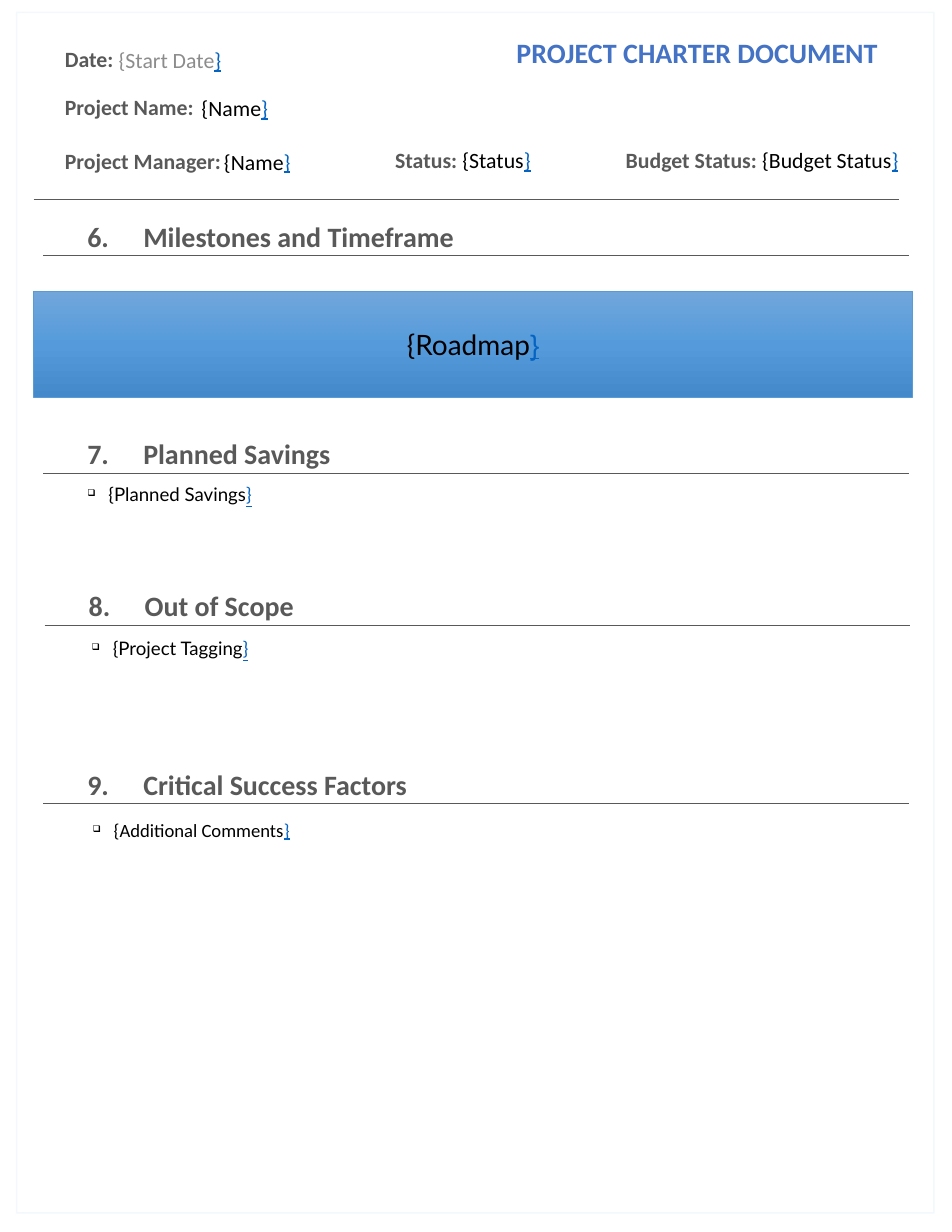
import copy
from dataclasses import dataclass

import lxml.etree
import pptx
import pptx.dml.color
import pptx.enum.shapes
import pptx.enum.text
import pptx.oxml.ns
import pptx.util

Cm = pptx.util.Cm
Pt = pptx.util.Pt
qn = pptx.oxml.ns.qn
Align = pptx.enum.text.PP_ALIGN
Shape = pptx.enum.shapes.MSO_SHAPE


@dataclass(frozen=True)
class Theme:
    label: str = "595959"
    value: str = "000000"
    muted: str = "8C8C8C"
    link: str = "0563C1"
    title: str = "4472C4"
    frame: str = "B5D2EC"
    banner_line: str = "5B9BD5"
    banner: tuple = ("71A6DB", "559BDB", "448ACA")
    heading_size: int = 18
    field_size: int = 14
    bullet_size: int = 12
    font: str = "Calibri"
    accent_font: str = "Lato"
    brace_font: str = "Arial"


theme = Theme()

# Content: lengths in cm, boxes are (left, top, width, height)
title = ("PROJECT CHARTER DOCUMENT", (10.92, 0.69, 9.78, 0.99))
roadmap = ("{Roadmap", (0.76, 6.6, 19.94, 2.41))
frame_box = (0.38, 0.28, 20.8, 27.23)

# Header fields: label, placeholder, box, wraps, value colour
fields = [
    ("Date:", "", (1.22, 0.91, 2.31, 0.86), True, theme.value),
    ("", "{Start Date", (2.44, 0.61, 3.23, 1.5), True, theme.muted),
    ("Project Name:", "", (1.22, 2.01, 4.57, 0.86), True, theme.value),
    ("", "{Name", (4.32, 1.91, 8.31, 1.09), True, theme.value),
    ("Project Manager:", "", (1.22, 3.23, 4.09, 0.86), False, theme.value),
    ("", "{Name", (4.83, 3.1, 8.31, 1.12), True, theme.value),
    ("Status: ", "{Status", (8.71, 3.2, 3.61, 0.86), False, theme.value),
    ("Budget Status: ", "{Budget Status", (13.94, 3.2, 6.76, 0.86), False, theme.value),
]

# Sections: heading, left, top, width, then bullet (text, left, top, font)
sections = [
    ("Milestones and Timeframe", 1.73, 4.85, 10.19, None),
    ("Planned Savings", 1.73, 9.78, 7.37,
     ("{Planned Savings", 1.73, 10.82, theme.accent_font)),
    ("Out of Scope", 1.76, 13.23, 6.5,
     ("{Project Tagging", 1.83, 14.33, theme.accent_font)),
    ("Critical Success Factors", 1.73, 17.28, 9.12,
     ("{Additional Comments", 1.85, 18.44, theme.font)),
]
FIRST_NUMBER = 6
RULE_WIDTH, RULE_OUTDENT, RULE_DROP = 19.63, 0.75, 0.95
BULLET_RIGHT, BULLET_INDENT = 20.6, 0.48

deck = pptx.Presentation()
deck.slide_width, deck.slide_height = Cm(21.59), Cm(27.94)
slide = deck.slides.add_slide(deck.slide_layouts[6])


def rgb(colour):
    return pptx.dml.color.RGBColor.from_string(colour)


def add_run(paragraph, text, size, colour, font=theme.font, bold=False, underline=None):
    run = paragraph.add_run()
    run.text = text
    run.font.size, run.font.name = Pt(size), font
    run.font.bold, run.font.underline = bold, underline
    run.font.color.rgb = rgb(colour)


def add_placeholder(paragraph, text, size, colour=theme.value, font=theme.font,
                    brace_font=None):
    add_run(paragraph, text, size, colour, font)
    add_run(paragraph, "}", size, theme.link, brace_font or font, underline=True)


def add_text(box, wrap=True, middle=False):
    frame = slide.shapes.add_textbox(*map(Cm, box)).text_frame
    frame.word_wrap = wrap
    if middle:
        frame.vertical_anchor = pptx.enum.text.MSO_ANCHOR.MIDDLE
    else:
        frame.auto_size = pptx.enum.text.MSO_AUTO_SIZE.SHAPE_TO_FIT_TEXT
    return frame.paragraphs[0]


def add_rule(left, top):
    rule = slide.shapes.add_connector(
        pptx.enum.shapes.MSO_CONNECTOR.STRAIGHT,
        Cm(left), Cm(top), Cm(left + RULE_WIDTH), Cm(top))
    rule.line.color.rgb, rule.line.width = rgb(theme.label), Pt(0.5)
    lxml.etree.SubElement(rule._element.spPr, qn("a:effectLst"))


def add_bullet(text, left, top, font):
    paragraph = add_text((left, top, BULLET_RIGHT - left, 0.76))
    props = paragraph._p.get_or_add_pPr()
    props.set("marL", str(Cm(BULLET_INDENT)))
    props.set("indent", str(-Cm(BULLET_INDENT)))
    lxml.etree.SubElement(props, qn("a:buSzPct")).set("val", "50000")
    lxml.etree.SubElement(props, qn("a:buChar")).set("char", "❑")
    add_placeholder(paragraph, text, theme.bullet_size, font=font)


def add_box(box, line, width):
    shape = slide.shapes.add_shape(Shape.RECTANGLE, *map(Cm, box))
    shape.shadow.inherit = False
    shape.line.color.rgb, shape.line.width = rgb(line), Pt(width)
    return shape


# Page frame, with a nearly transparent line
page_frame = add_box(frame_box, theme.frame, 1)
page_frame.fill.background()
frame_colour = page_frame.line._ln.find(".//" + qn("a:srgbClr"))
lxml.etree.SubElement(frame_colour, qn("a:alpha")).set("val", "15000")

# Title and header fields
heading = add_text(title[1], middle=True)
heading.alignment = Align.CENTER
add_run(heading, title[0], theme.heading_size, theme.title, bold=True)
for label, placeholder, box, wrap, colour in fields:
    field = add_text(box, wrap, middle=not label)
    if label:
        add_run(field, label, theme.field_size, theme.label, bold=True)
    if placeholder:
        add_placeholder(field, placeholder, theme.field_size, colour)
add_rule(0.76, 4.52)

# Numbered sections
for number, (name, left, top, width, bullet) in enumerate(sections, FIRST_NUMBER):
    add_run(add_text((left, top, width, 1.02), wrap=False), f"{number}.\t{name}",
            theme.heading_size, theme.label, bold=True)
    add_rule(left - RULE_OUTDENT, top + RULE_DROP)
    if bullet:
        add_bullet(*bullet)

# Roadmap banner with a three-stop gradient
banner = add_box(roadmap[1], theme.banner_line, 0.5)
banner.fill.gradient()
banner.fill.gradient_angle = 270
stop_list = banner._element.spPr.find(".//" + qn("a:gsLst"))
stop_list.insert(1, copy.deepcopy(stop_list[0]))
for index, (stop, colour) in enumerate(zip(banner.fill.gradient_stops, theme.banner)):
    stop.position = index / 2
    stop.color.rgb = rgb(colour)
banner.text_frame.vertical_anchor = pptx.enum.text.MSO_ANCHOR.MIDDLE
caption = banner.text_frame.paragraphs[0]
caption.alignment = Align.CENTER
add_placeholder(caption, roadmap[0], theme.heading_size,
                font=theme.accent_font, brace_font=theme.brace_font)

deck.save("out.pptx")
